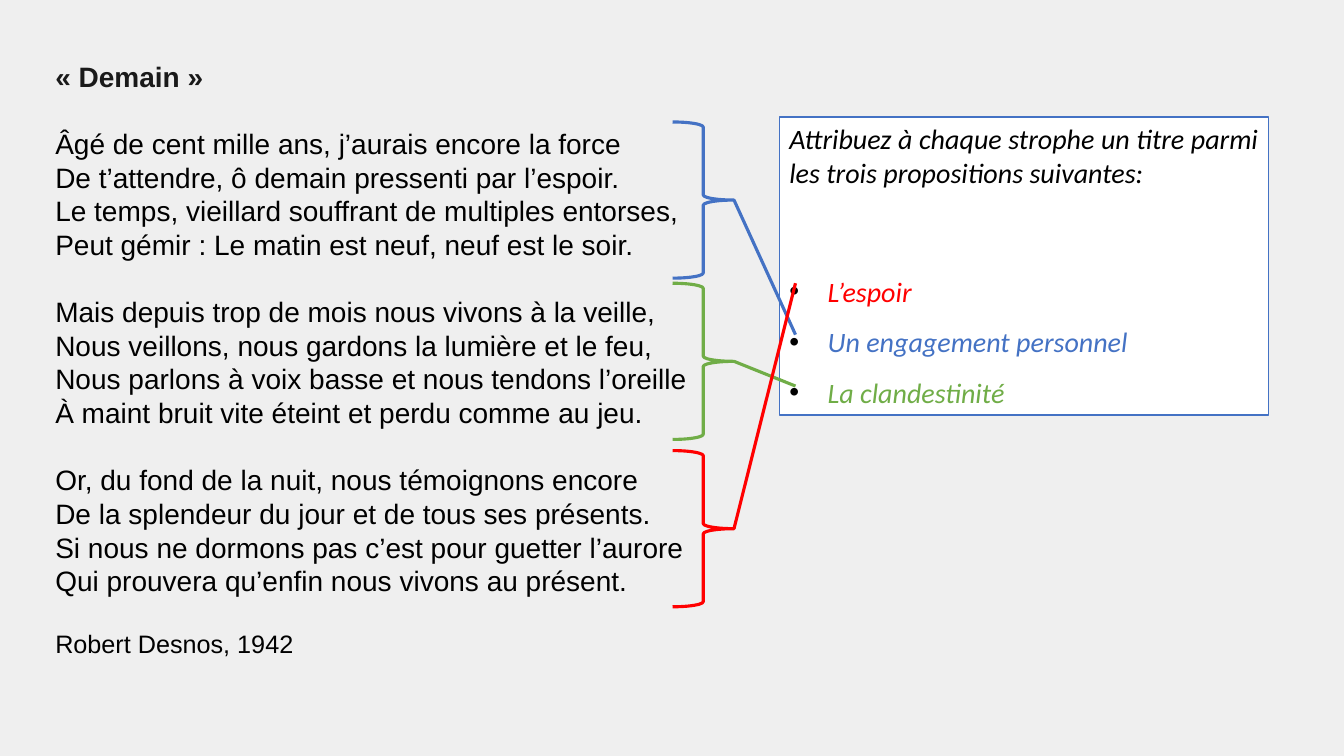
"""Build a slide that matches the stanzas of a poem with their titles."""
import pptx
import pptx.util
import pptx.dml.color
import pptx.enum.shapes
import pptx.enum.text
import pptx.oxml
import pptx.oxml.ns
from pptx.util import Inches, Pt

RGBColor = pptx.dml.color.RGBColor
BACKGROUND = RGBColor(0xEF, 0xEF, 0xEF)
WHITE = RGBColor(0xFF, 0xFF, 0xFF)
BLACK = RGBColor(0, 0, 0)
CHARCOAL = RGBColor(0x1A, 0x1A, 0x1A)
BLUE = RGBColor(0x44, 0x72, 0xC4)
GREEN = RGBColor(0x70, 0xAD, 0x47)
RED = RGBColor(0xFF, 0, 0)

POEM_TITLE = "« Demain »"
STANZAS = [
    ("Âgé de cent mille ans, j’aurais encore la force",
     "De t’attendre, ô demain pressenti par l’espoir.",
     "Le temps, vieillard souffrant de multiples entorses,",
     "Peut gémir : Le matin est neuf, neuf est le soir."),
    ("Mais depuis trop de mois nous vivons à la veille,",
     "Nous veillons, nous gardons la lumière et le feu,",
     "Nous parlons à voix basse et nous tendons l’oreille",
     "À maint bruit vite éteint et perdu comme au jeu."),
    ("Or, du fond de la nuit, nous témoignons encore",
     "De la splendeur du jour et de tous ses présents.",
     "Si nous ne dormons pas c’est pour guetter l’aurore",
     "Qui prouvera qu’enfin nous vivons au présent."),
]
AUTHOR = "Robert Desnos, 1942"
QUESTION = "Attribuez à chaque strophe un titre parmi les trois propositions suivantes:"
ANSWERS = [("L’espoir", RED), ("Un engagement personnel", BLUE), ("La clandestinité", GREEN)]
BRACES = [(1.21, BLUE, 1), (2.81, GREEN, 2), (4.47, RED, 0)]

BRACE_LEFT, BRACE_WIDTH, BRACE_HEIGHT = 6.67, 0.61, 1.55
LINK_END, FIRST_ANSWER_TOP, ANSWER_STEP = 7.89, 2.81, 0.51
POEM_FONT = {"name": "Arial", "size": Pt(20), "bold": False}
ANSWER_FONT = {"name": "Calibri", "size": Pt(20), "italic": True}
FRAME_FORMAT = {
    "word_wrap": True,
    "vertical_anchor": pptx.enum.text.MSO_ANCHOR.TOP,
    "margin_left": Inches(0.1), "margin_right": Inches(0.1),
    "margin_top": Inches(0.05), "margin_bottom": Inches(0.05),
}


def set_attributes(target, values):
    """Set every named value on the target."""
    for name, value in values.items():
        setattr(target, name, value)


def add_paragraph(frame, text, font, color, layout):
    """Add a formatted paragraph, reusing the empty first one."""
    paragraph = frame.paragraphs[0] if not frame.text else frame.add_paragraph()
    paragraph.text = text
    set_attributes(paragraph, layout)
    for run in paragraph.runs:
        set_attributes(run.font, font)
        run.font.color.rgb = color
    return paragraph


def add_bullet(paragraph):
    """Give the paragraph a black hanging bullet."""
    properties = paragraph._p.get_or_add_pPr()
    properties.set("marL", str(Inches(0.38)))
    properties.set("indent", str(-Inches(0.38)))
    namespace = pptx.oxml.ns.nsdecls("a")
    for markup in (f'<a:buClr {namespace}><a:srgbClr val="{BLACK}"/></a:buClr>',
                   f'<a:buFont {namespace} typeface="Arial"/>',
                   f'<a:buChar {namespace} char="•"/>'):
        properties.append(pptx.oxml.parse_xml(markup))


def add_poem(slide):
    """Add the poem with its title and author."""
    box = slide.shapes.add_textbox(Inches(0.45), Inches(0.54), Inches(6.6), Inches(6.09))
    frame = box.text_frame
    set_attributes(frame, FRAME_FORMAT)
    verse_layout = {"line_spacing": Pt(24), "space_before": Pt(24)}
    add_paragraph(frame, POEM_TITLE, POEM_FONT | {"bold": True}, CHARCOAL, {"line_spacing": Pt(24)})
    for verses in STANZAS:
        add_paragraph(frame, "\v".join(verses), POEM_FONT, BLACK, verse_layout)
    add_paragraph(frame, AUTHOR, POEM_FONT | {"size": Pt(18)}, BLACK,
                  {"line_spacing": Pt(22), "space_before": Pt(22)})


def add_brace(slide, top, color):
    """Add the brace beside one stanza."""
    brace = slide.shapes.add_shape(
        pptx.enum.shapes.MSO_SHAPE.RIGHT_BRACE, Inches(BRACE_LEFT), Inches(top),
        Inches(BRACE_WIDTH), Inches(BRACE_HEIGHT))
    brace.shadow.inherit = False
    brace.fill.background()
    brace.line.color.rgb = color
    brace.line.width = Pt(2.25)


def add_question(slide):
    """Add the question box with its three answers."""
    box = slide.shapes.add_shape(
        pptx.enum.shapes.MSO_SHAPE.RECTANGLE,
        Inches(7.73), Inches(1.16), Inches(4.85), Inches(2.96))
    box.shadow.inherit = False
    box.fill.solid()
    box.fill.fore_color.rgb = WHITE
    box.line.color.rgb = BLUE
    box.line.width = Pt(1)
    frame = box.text_frame
    set_attributes(frame, FRAME_FORMAT)
    justified = {"alignment": pptx.enum.text.PP_ALIGN.JUSTIFY}
    add_paragraph(frame, QUESTION, ANSWER_FONT, BLACK, justified | {"space_after": Pt(49)})
    for answer, color in ANSWERS:
        add_bullet(add_paragraph(frame, answer, ANSWER_FONT, color,
                                 justified | {"line_spacing": 1.5}))


def add_link(slide, top, color, answer_index):
    """Link the tip of a brace to its answer."""
    link = slide.shapes.add_connector(
        pptx.enum.shapes.MSO_CONNECTOR.STRAIGHT,
        Inches(BRACE_LEFT + BRACE_WIDTH), Inches(top + BRACE_HEIGHT / 2),
        Inches(LINK_END), Inches(FIRST_ANSWER_TOP + answer_index * ANSWER_STEP))
    link.line.color.rgb = color
    link.line.width = Pt(2.25)
    link._element.spPr.append(
        pptx.oxml.parse_xml(f'<a:effectLst {pptx.oxml.ns.nsdecls("a")}/>'))


def main():
    """Build and save the slide."""
    presentation = pptx.Presentation()
    presentation.slide_width = Inches(13.33)
    presentation.slide_height = Inches(7.5)
    slide = presentation.slides.add_slide(presentation.slide_layouts[6])
    slide.background.fill.solid()
    slide.background.fill.fore_color.rgb = BACKGROUND
    add_poem(slide)
    for top, color, _ in BRACES:
        add_brace(slide, top, color)
    add_question(slide)
    for top, color, answer_index in BRACES:
        add_link(slide, top, color, answer_index)
    presentation.save("out.pptx")


if __name__ == "__main__":
    main()
